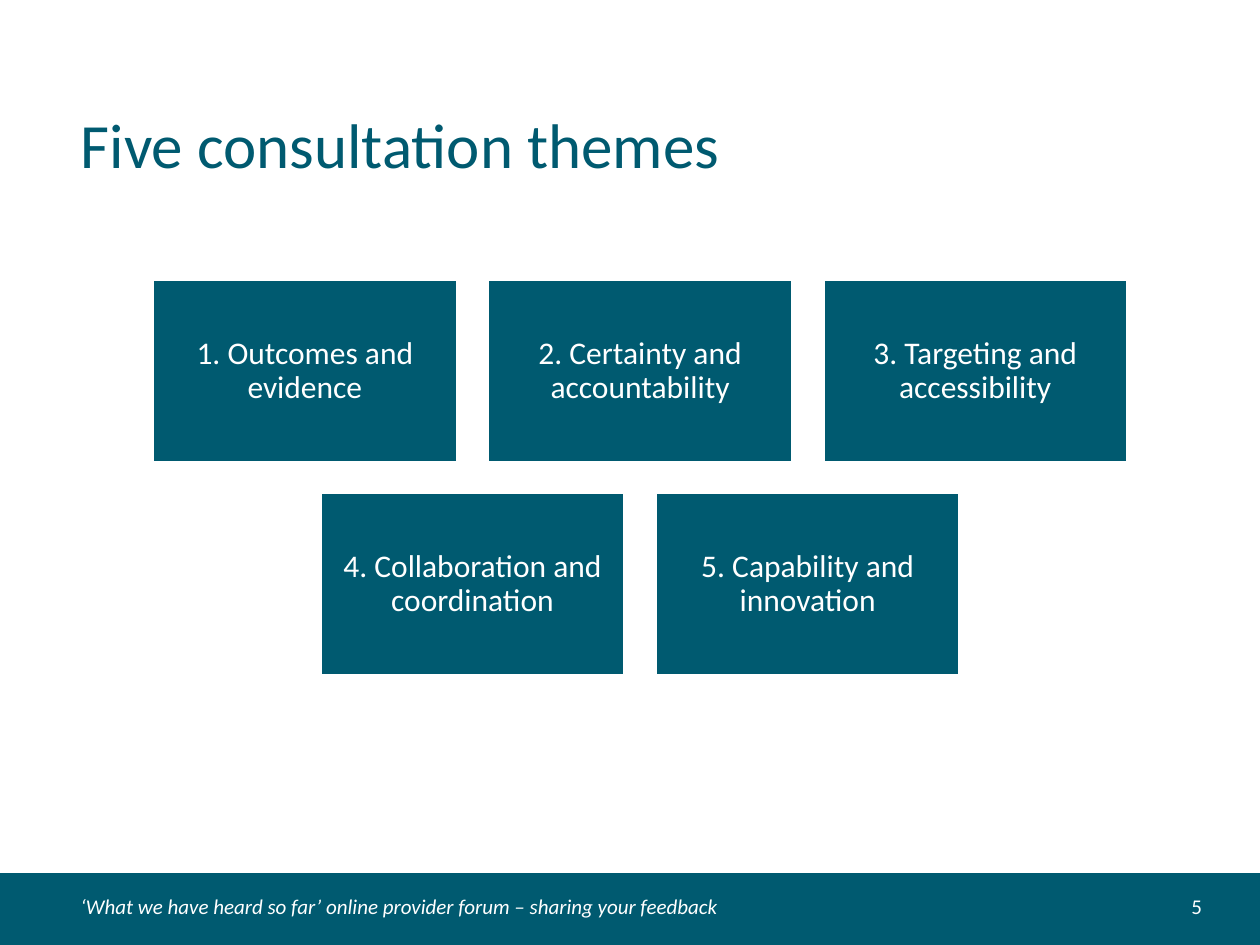
from pptx import Presentation
from pptx.dml.color import RGBColor
from pptx.enum.shapes import MSO_SHAPE
from pptx.enum.text import MSO_ANCHOR, MSO_AUTO_SIZE, PP_ALIGN
from pptx.util import Inches, Pt

TEAL = "005A70"
WHITE = "FFFFFF"

THEME_ROWS = [
    ["1. Outcomes and evidence", "2. Certainty and accountability", "3. Targeting and accessibility"],
    ["4. Collaboration and coordination", "5. Capability and innovation"],
]
BOX_WIDTH, BOX_HEIGHT, GAP = 2.42, 1.45, 0.24
GRID_CENTER, GRID_TOP = 5.08, 2.22


def color(hex_value):
    return RGBColor.from_string(hex_value)


def write_text(shape, text, size, hex_color, margin=0, anchor=MSO_ANCHOR.MIDDLE,
               align=PP_ALIGN.LEFT, line_spacing=1.0, italic=False):
    frame = shape.text_frame
    frame_format = {
        "word_wrap": True,
        "auto_size": MSO_AUTO_SIZE.NONE,
        "vertical_anchor": anchor,
    }
    for side in ("left", "top", "right", "bottom"):
        frame_format[f"margin_{side}"] = Inches(margin)
    for name, value in frame_format.items():
        setattr(frame, name, value)

    paragraph = frame.paragraphs[0]
    paragraph.alignment = align
    paragraph.line_spacing = line_spacing
    run = paragraph.add_run()
    run.text = text
    font_format = {"name": "Calibri", "size": Pt(size), "italic": italic, "bold": False}
    for name, value in font_format.items():
        setattr(run.font, name, value)
    run.font.color.rgb = color(hex_color)


def add_box(slide, left, top, width, height):
    shape = slide.shapes.add_shape(
        MSO_SHAPE.RECTANGLE, Inches(left), Inches(top), Inches(width), Inches(height))
    shape.shadow.inherit = False
    shape.fill.solid()
    shape.fill.fore_color.rgb = color(TEAL)
    shape.line.fill.background()
    return shape


def add_title(slide, text):
    title = slide.shapes.title
    position = {"left": 0.64, "top": 0.95, "width": 9.03, "height": 0.47}
    for name, value in position.items():
        setattr(title, name, Inches(value))
    write_text(title, text, 36, TEAL, anchor=MSO_ANCHOR.TOP, line_spacing=0.8)


def add_footer_text(slide, text, left, width, **text_format):
    text_box = slide.shapes.add_textbox(
        Inches(left), Inches(6.99), Inches(width), Inches(0.4))
    write_text(text_box, text, 12, WHITE, **text_format)


def add_themes(slide):
    """Lay out the theme boxes in rows that share one centre line."""
    for row, themes in enumerate(THEME_ROWS):
        row_width = len(themes) * (BOX_WIDTH + GAP) - GAP
        top = GRID_TOP + row * (BOX_HEIGHT + GAP)
        for column, theme in enumerate(themes):
            left = GRID_CENTER - row_width / 2 + column * (BOX_WIDTH + GAP)
            box = add_box(slide, left, top, BOX_WIDTH, BOX_HEIGHT)
            box.line.color.rgb = color(WHITE)
            box.line.width = Pt(2)
            write_text(box, theme, 18, WHITE, margin=0.07,
                       align=PP_ALIGN.CENTER, line_spacing=0.9)


def main():
    presentation = Presentation()
    presentation.slide_width = Inches(10)
    presentation.slide_height = Inches(7.5)
    slide = presentation.slides.add_slide(presentation.slide_layouts[5])

    add_box(slide, 0, 6.93, 10, 0.57)
    add_title(slide, "Five consultation themes")
    add_footer_text(
        slide, "‘What we have heard so far’ online provider forum – sharing your feedback",
        0.64, 7.12, italic=True)
    add_footer_text(slide, "5", 8.94, 0.6, align=PP_ALIGN.RIGHT)
    add_themes(slide)

    presentation.save("out.pptx")


if __name__ == "__main__":
    main()
